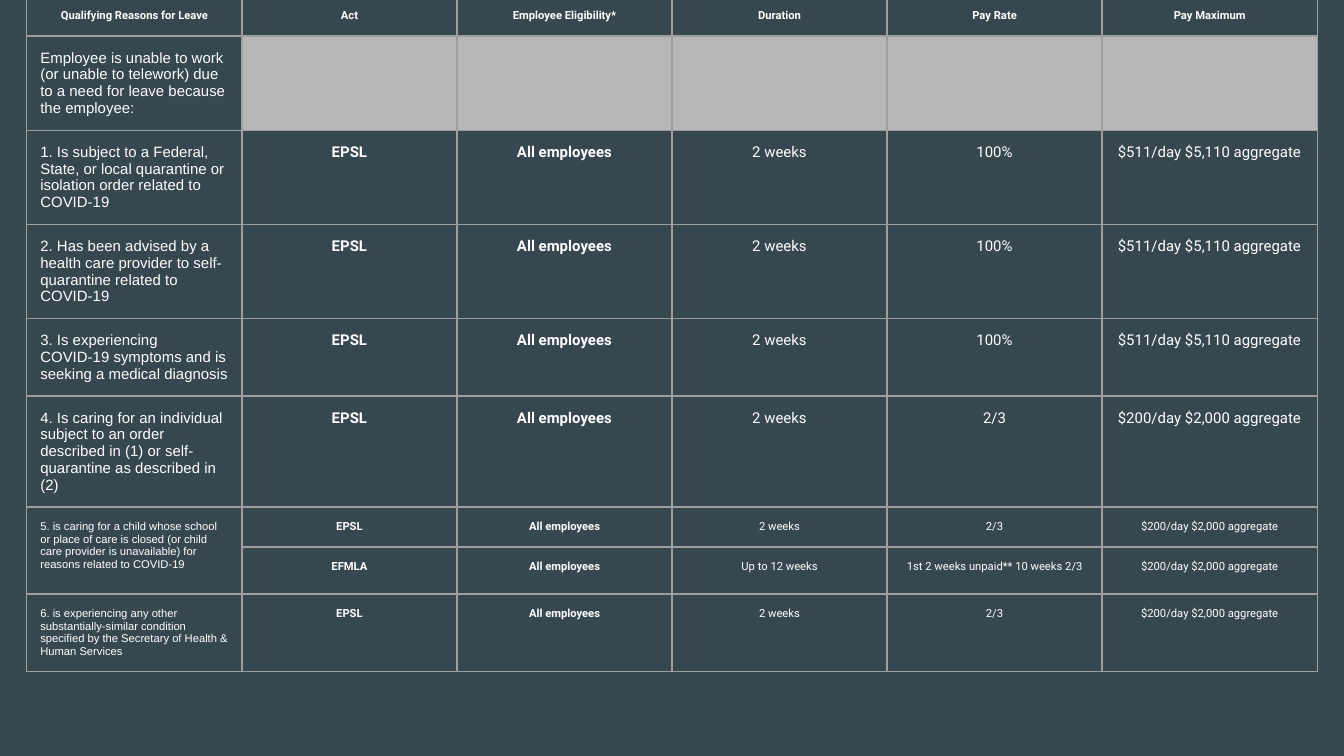
from lxml.etree import SubElement
from pptx import Presentation
from pptx.dml.color import RGBColor
from pptx.enum.text import PP_ALIGN
from pptx.oxml.ns import qn
from pptx.util import Inches, Pt

SLATE = RGBColor(0x37, 0x47, 0x4F)
WHITE = RGBColor(0xFF, 0xFF, 0xFF)
GRAY = RGBColor(0xB7, 0xB7, 0xB7)
EDGE = RGBColor(0x9E, 0x9E, 0x9E)

# Content: row height, text size, cell texts
HIGH = "$511/day $5,110 aggregate"
LOW = "$200/day $2,000 aggregate"
ALL = "All employees"
ROWS = [
    (0, 6, ["Qualifying Reasons for Leave", "Act", "Employee Eligibility*",
            "Duration", "Pay Rate", "Pay Maximum"]),
    (0.47, 8, ["Employee is unable to work (or unable to telework) due to a "
               "need for leave because the employee:", "", "", "", "", ""]),
    (0.33, 8, ["1. Is subject to a Federal, State, or local quarantine or "
               "isolation order related to COVID-19",
               "EPSL", ALL, "2 weeks", "100%", HIGH]),
    (0.33, 8, ["2. Has been advised by a health care provider to "
               "self-quarantine related to COVID-19",
               "EPSL", ALL, "2 weeks", "100%", HIGH]),
    (0.33, 8, ["3. Is experiencing COVID-19 symptoms and is seeking a "
               "medical diagnosis",
               "EPSL", ALL, "2 weeks", "100%", HIGH]),
    (0.39, 8, ["4. Is caring for an individual subject to an order described "
               "in (1) or self-quarantine as described in (2)",
               "EPSL", ALL, "2 weeks", "2/3", LOW]),
    (0, 6, ["5. is caring for a child whose school or place of care is closed "
            "(or child care provider is unavailable) for reasons related to "
            "COVID-19", "EPSL", ALL, "2 weeks", "2/3", LOW]),
    (0.35, 6, ["", "EFMLA", ALL, "Up to 12 weeks",
               "1st 2 weeks unpaid** 10 weeks 2/3", LOW]),
    (0.34, 6, ["6. is experiencing any other substantially-similar condition "
               "specified by the Secretary of Health & Human Services",
               "EPSL", ALL, "2 weeks", "2/3", LOW]),
]
COLS = 6
WIDE = 1.6
SPLIT = 6  # this row's reason also covers the row below


def frame(cell):
    """Draw a thin line on all four sides of a cell."""
    props = cell._tc.get_or_add_tcPr()
    for side in ("a:lnL", "a:lnR", "a:lnT", "a:lnB"):
        line = SubElement(props, qn(side), w=str(Pt(0.75)))
        fill = SubElement(line, qn("a:solidFill"))
        SubElement(fill, qn("a:srgbClr"), val=str(EDGE))


def write(cell, text, size, font, bold, align):
    cell.text_frame.text = text
    para = cell.text_frame.paragraphs[0]
    para.alignment = align
    for run in para.runs:
        run.font.size = Pt(size)
        run.font.name = font
        run.font.bold = bold
        run.font.color.rgb = WHITE


# Slide, 16:9
deck = Presentation()
deck.slide_width = Inches(10)
deck.slide_height = Inches(10) * 9 // 16
slide = deck.slides.add_slide(deck.slide_layouts[6])
slide.background.fill.solid()
slide.background.fill.fore_color.rgb = SLATE

# Table
table = slide.shapes.add_table(
    len(ROWS), COLS, Inches(0.2), Inches(-0.03),
    Inches(COLS * WIDE), Inches(sum(row[0] for row in ROWS))).table
table.first_row = table.horz_banding = False
for col in table.columns:
    col.width = Inches(WIDE)

# Cells
for r, (tall, size, texts) in enumerate(ROWS):
    table.rows[r].height = Inches(tall)
    for c, text in enumerate(texts):
        cell = table.cell(r, c)
        cell.margin_left = cell.margin_right = Inches(0.1)
        cell.margin_top = cell.margin_bottom = Inches(0.1)
        frame(cell)
        if r == 1 and c > 0:
            cell.fill.solid()
            cell.fill.fore_color.rgb = GRAY
        else:
            cell.fill.background()
        reason = r > 0 and c == 0
        if text:
            write(cell, text, size, "Arial" if reason else "Roboto",
                  r == 0 or c in (1, 2),
                  PP_ALIGN.LEFT if reason else PP_ALIGN.CENTER)
table.cell(SPLIT, 0).merge(table.cell(SPLIT + 1, 0))

deck.save("out.pptx")
